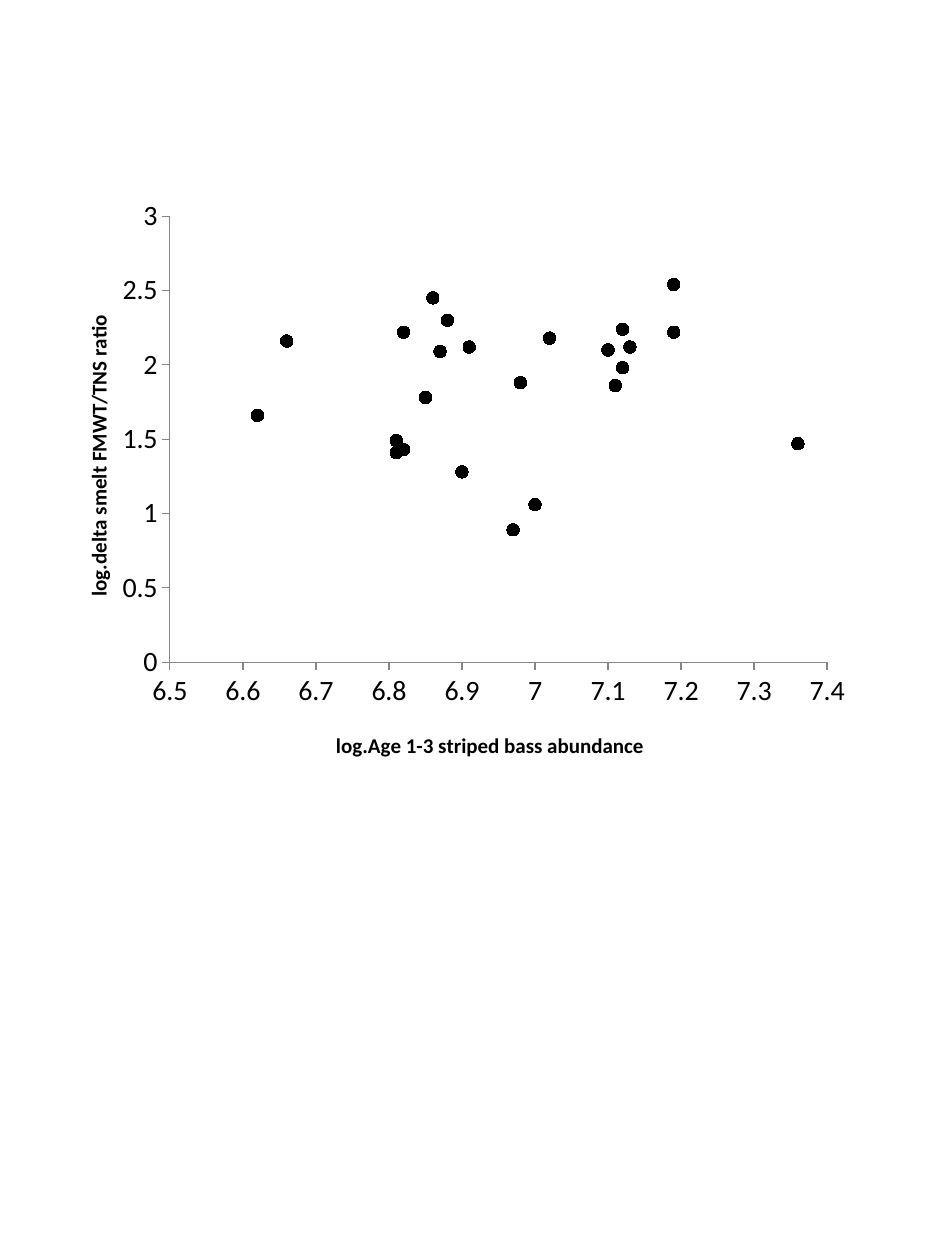
import pptx
import pptx.chart.data
import pptx.dml.color
import pptx.enum.chart
import pptx.oxml
import pptx.oxml.ns
import pptx.util
from pptx.util import Cm, Pt

POINTS = [  # (log striped bass abundance, log delta smelt ratio)
    (6.9, 1.28), (6.81, 1.49), (6.62, 1.66), (7.02, 2.18),
    (6.87, 2.09), (6.82, 1.43), (6.88, 2.3), (6.66, 2.16),
    (6.82, 2.22), (7.19, 2.22), (7.19, 2.54), (6.85, 1.78),
    (7.13, 2.12), (6.97, 0.89), (6.86, 2.45), (7.0, 1.06),
    (6.98, 1.88), (7.1, 2.1), (7.11, 1.86), (7.12, 1.98),
    (7.12, 2.24), (7.36, 1.47), (6.91, 2.12), (6.81, 1.41),
]
X_AXIS = {"title": "log.Age 1-3 striped bass abundance", "range": (6.5, 7.4, 0.1),
          "title_at": {"x": 0.35, "y": 0.91}}
Y_AXIS = {"title": "log.delta smelt FMWT/TNS ratio", "range": (0, 3, 0.5),
          "title_at": {"x": 0.04, "y": 0.21}}
PLOT_AT = {"x": 0.15, "y": 0.05, "w": 0.81, "h": 0.75}
THEME = {
    "font": "Calibri", "title": Pt(12), "tick": Pt(16), "marker": 7,
    "ink": pptx.dml.color.RGBColor(0, 0, 0),
    "axis": pptx.dml.color.RGBColor(0x86, 0x86, 0x86),
}


def manual_layout(place, inner=False):
    """Chart layout element holding fractions of the chart's size."""
    target = '<c:layoutTarget val="inner"/>' if inner else ""
    modes = "".join(f'<c:{k}Mode val="edge"/>' for k in "xy")
    values = "".join(f'<c:{k} val="{v}"/>' for k, v in place.items())
    return pptx.oxml.parse_xml(
        f'<c:layout {pptx.oxml.ns.nsdecls("c")}><c:manualLayout>'
        f"{target}{modes}{values}</c:manualLayout></c:layout>")


def replace_layout(parent, layout, after=None):
    for old in parent.findall(pptx.oxml.ns.qn("c:layout")):
        parent.remove(old)
    if after is None:
        parent.insert(0, layout)
    else:
        after.addnext(layout)


def set_font(font, size, bold):
    font.name, font.size, font.bold = THEME["font"], size, bold
    font.color.rgb = THEME["ink"]


def format_axis(axis, content):
    axis.minimum_scale, axis.maximum_scale, axis.major_unit = content["range"]
    axis.has_major_gridlines = False
    axis.major_tick_mark = pptx.enum.chart.XL_TICK_MARK.OUTSIDE
    axis.minor_tick_mark = pptx.enum.chart.XL_TICK_MARK.NONE
    axis.format.line.color.rgb = THEME["axis"]
    axis.format.line.width = Pt(0.75)
    axis.tick_labels.number_format = "General"
    axis.tick_labels.number_format_is_linked = False
    set_font(axis.tick_labels.font, THEME["tick"], False)
    tf = axis.axis_title.text_frame
    tf.text = content["title"]
    set_font(tf.paragraphs[0].runs[0].font, THEME["title"], True)
    title = axis.axis_title._element
    replace_layout(title, manual_layout(content["title_at"]),
                   after=title.find(pptx.oxml.ns.qn("c:tx")))


def add_scatter(s):
    data = pptx.chart.data.XyChartData()
    series = data.add_series("Series 1")
    for x, y in POINTS:
        series.add_data_point(x, y)
    chart = s.shapes.add_chart(
        pptx.enum.chart.XL_CHART_TYPE.XY_SCATTER,
        Cm(0.97), Cm(3.76), Cm(16.36), Cm(11.99), data).chart
    chart.has_legend = False
    chart.has_title = False
    set_font(chart.font, Pt(10), False)
    format_axis(chart.category_axis, X_AXIS)
    format_axis(chart.value_axis, Y_AXIS)
    # Turn the vertical title to read upwards.
    body = chart.value_axis.axis_title.text_frame._txBody.bodyPr
    body.set("rot", "-5400000")
    body.set("vert", "horz")

    plot = chart.plots[0]
    plot.vary_by_categories = False
    points = plot.series[0]
    points.smooth = False
    points.format.line.fill.background()
    marker = points.marker
    marker.style = pptx.enum.chart.XL_MARKER_STYLE.CIRCLE
    marker.size = THEME["marker"]
    marker.format.fill.solid()
    marker.format.fill.fore_color.rgb = THEME["ink"]
    marker.format.line.color.rgb = THEME["ink"]
    area = chart._chartSpace.chart.plotArea
    replace_layout(area, manual_layout(PLOT_AT, inner=True))


def main():
    prs = pptx.Presentation()
    prs.slide_width, prs.slide_height = Cm(19.05), Cm(25.4)
    s = prs.slides.add_slide(prs.slide_layouts[6])
    add_scatter(s)
    prs.save("out.pptx")


if __name__ == "__main__":
    main()
